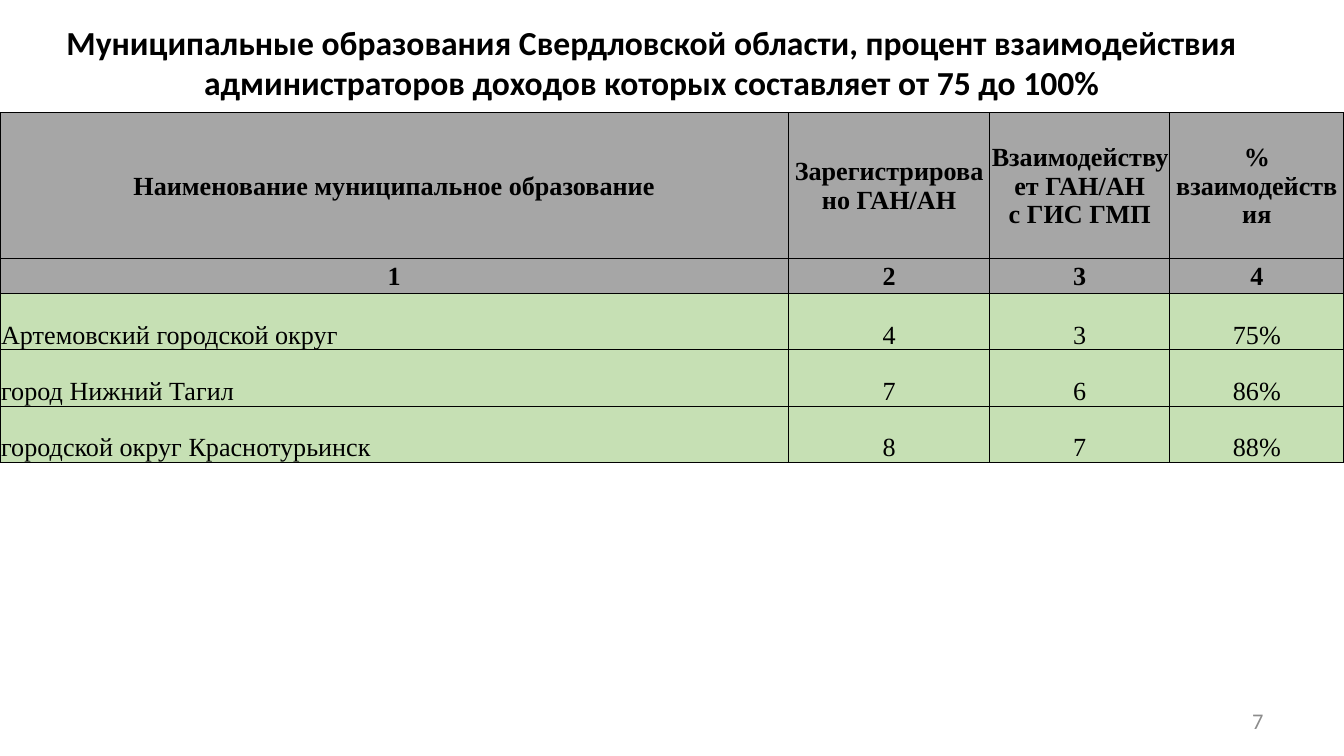
import dataclasses

import pptx
import pptx.dml.color
import pptx.enum.text
import pptx.oxml
import pptx.oxml.ns
import pptx.util

Pt = pptx.util.Pt
Align = pptx.enum.text.PP_ALIGN
Anchor = pptx.enum.text.MSO_ANCHOR


@dataclasses.dataclass(frozen=True)
class Theme:
    heading_font: str = "Calibri"
    table_font: str = "Times New Roman"
    ink: str = "000000"
    muted: str = "8C8C8C"
    header_fill: str = "A6A6A6"
    row_fill: str = "C6E0B4"
    title_size: float = 18
    table_size: float = 14
    number_size: float = 12
    border: float = 0.5


class SlideBuilder:
    """Adds styled elements to the current slide."""

    def __init__(self, page, theme):
        self.page = page
        self.theme = theme

    def set_text(self, para, text, font, size, color, align, bold=False):
        para.text = text
        para.alignment = align
        para.font.name = font
        para.font.size = Pt(size)
        para.font.bold = bold
        para.font.color.rgb = pptx.dml.color.RGBColor.from_string(color)

    def place(self, box, left, top, width, height):
        box.left, box.top = Pt(left), Pt(top)
        box.width, box.height = Pt(width), Pt(height)
        box.text_frame.word_wrap = True
        box.text_frame.vertical_anchor = Anchor.MIDDLE
        return box.text_frame.paragraphs[0]

    def title(self, text, *area):
        para = self.place(self.page.shapes.title, *area)
        para.line_spacing = 1
        self.set_text(para, text, self.theme.heading_font, self.theme.title_size,
                      self.theme.ink, Align.CENTER, True)

    def page_number(self, text, *area):
        box = self.page.shapes.add_textbox(*map(Pt, area))
        self.set_text(self.place(box, *area), text, self.theme.heading_font,
                      self.theme.number_size, self.theme.muted, Align.RIGHT)

    def outline(self, cell):
        properties = cell._tc.get_or_add_tcPr()
        for side in ("lnL", "lnR", "lnT", "lnB"):
            properties.append(pptx.oxml.parse_xml(
                f'<a:{side} {pptx.oxml.ns.nsdecls("a")} w="{Pt(self.theme.border)}">'
                f'<a:solidFill><a:srgbClr val="{self.theme.ink}"/></a:solidFill></a:{side}>'))

    def fill_cell(self, cell, text, header, align):
        self.outline(cell)
        color = self.theme.header_fill if header else self.theme.row_fill
        cell.fill.solid()
        cell.fill.fore_color.rgb = pptx.dml.color.RGBColor.from_string(color)
        cell.margin_left = cell.margin_right = cell.margin_top = Pt(0.6)
        cell.margin_bottom = 0
        cell.vertical_anchor = Anchor.MIDDLE if header else Anchor.BOTTOM
        self.set_text(cell.text_frame.paragraphs[0], text, self.theme.table_font,
                      self.theme.table_size, self.theme.ink, align, header)

    def table(self, rows, header_rows, left, top, widths, heights):
        table = self.page.shapes.add_table(
            len(rows), len(widths), Pt(left), Pt(top),
            Pt(sum(widths)), Pt(sum(heights))).table
        for column, width in zip(table.columns, widths):
            column.width = Pt(width)
        for row, height in zip(table.rows, heights):
            row.height = Pt(height)
        for row_index, values in enumerate(rows):
            header = row_index < header_rows
            for column_index, text in enumerate(values):
                align = Align.CENTER if header or column_index else Align.LEFT
                self.fill_cell(table.cell(row_index, column_index), text, header, align)


def main():
    deck = pptx.Presentation()
    deck.slide_width, deck.slide_height = Pt(720), Pt(405)
    page = deck.slides.add_slide(deck.slide_layouts[5])
    builder = SlideBuilder(page, Theme())
    builder.title("Муниципальные образования Свердловской области, процент взаимодействия "
                  "администраторов доходов которых составляет от 75 до 100%",
                  25.2, -0.5, 648, 67.5)
    rows = [
        ("Наименование муниципальное образование", "Зарегистрировано ГАН/АН",
         "Взаимодействует ГАН/АН\nс ГИС ГМП", "% взаимодействия"),
        ("1", "2", "3", "4"),
        ("Артемовский городской округ", "4", "3", "75%"),
        ("город Нижний Тагил", "7", "6", "86%"),
        ("городской округ Краснотурьинск", "8", "7", "88%"),
    ]
    builder.table(rows, 2, 0, 60.5, [422.5, 107.75, 96.5, 93.25],
                  [78, 18.75] + [30.2] * 3)
    builder.page_number("7", 516, 375.4, 168, 21.6)
    deck.save("out.pptx")


if __name__ == "__main__":
    main()
